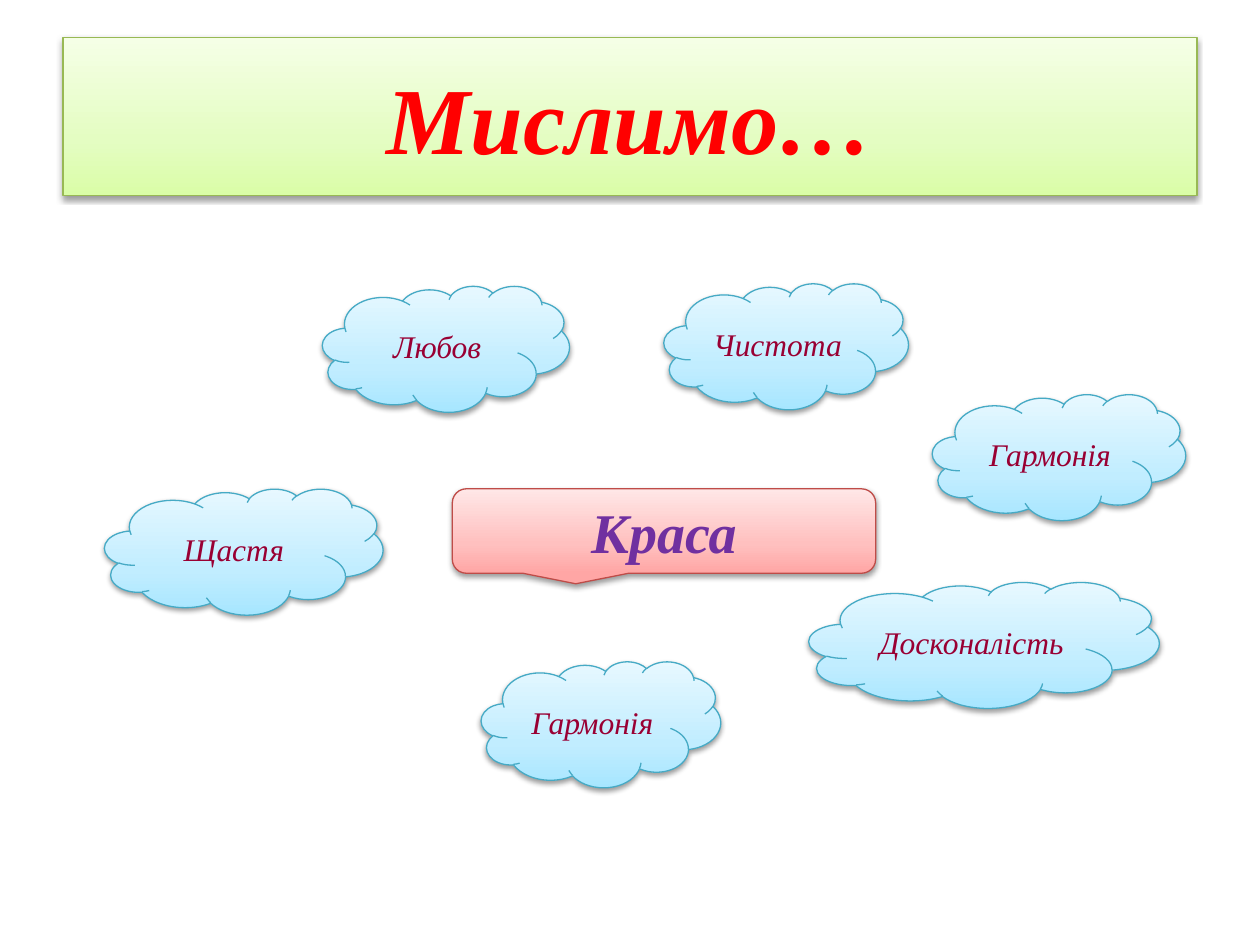
"""Build a slide of clouds with associations around the word for beauty."""
from typing import NamedTuple

from lxml import etree
from pptx import Presentation
from pptx.dml.color import RGBColor
from pptx.enum import shapes, text
from pptx.oxml import ns
from pptx.util import Inches, Pt

RED = RGBColor(0xFF, 0x00, 0x00)
PURPLE = RGBColor(0x70, 0x30, 0xA0)
WINE = RGBColor(0x99, 0x00, 0x33)
GREEN_LINE = RGBColor(0x98, 0xB9, 0x54)
RED_LINE = RGBColor(0xBF, 0x4C, 0x48)
BLUE_LINE = RGBColor(0x46, 0xAA, 0xC5)
GREENS = (RGBColor(0xDA, 0xFD, 0xA7), RGBColor(0xE4, 0xFD, 0xC2), RGBColor(0xF5, 0xFF, 0xE6))
PINKS = (RGBColor(0xFF, 0xA6, 0xA5), RGBColor(0xFF, 0xC0, 0xBF), RGBColor(0xFF, 0xE7, 0xE7))
BLUES = (RGBColor(0xA7, 0xE6, 0xFF), RGBColor(0xC1, 0xED, 0xFF), RGBColor(0xE7, 0xF8, 0xFF))
STOPS = (0, 35, 100)
FONT = "Times New Roman"


class Style(NamedTuple):
    shape: shapes.MSO_SHAPE
    fills: tuple[RGBColor, ...]
    line: RGBColor
    color: RGBColor
    size: int
    bold: bool


class Label(NamedTuple):
    text: str
    left: float
    top: float
    width: float
    height: float = 1


TITLE = Style(shapes.MSO_SHAPE.RECTANGLE, GREENS, GREEN_LINE, RED, 54, True)
CALLOUT = Style(shapes.MSO_SHAPE.ROUNDED_RECTANGULAR_CALLOUT, PINKS, RED_LINE, PURPLE, 32, True)
CLOUD = Style(shapes.MSO_SHAPE.CLOUD, BLUES, BLUE_LINE, WINE, 18, False)

CLOUDS = (
    Label("Любов", 2.56, 2.27, 1.96),
    Label("Чистота", 5.27, 2.25, 1.94),
    Label("Гармонія", 7.4, 3.13, 2.01),
    Label("Гармонія", 3.82, 5.25, 1.9),
    Label("Щастя", 0.83, 3.88, 2.21),
    Label("Досконалість", 6.42, 4.62, 2.78),
)


def add_color(parent, color: RGBColor):
    return etree.SubElement(parent, ns.qn("a:srgbClr"), val=str(color))


def set_gradient(sp, colors: tuple[RGBColor, ...]) -> None:
    sp.fill.gradient()
    sp.fill.gradient_angle = 90
    stops = sp._element.spPr.find(".//" + ns.qn("a:gsLst"))
    for stop in list(stops):
        stops.remove(stop)
    for position, color in zip(STOPS, colors):
        add_color(etree.SubElement(stops, ns.qn("a:gs"), pos=str(position * 1000)), color)


def set_shadow(sp) -> None:
    sp.shadow.inherit = False
    effects = sp._element.spPr.find(ns.qn("a:effectLst"))
    shadow = etree.SubElement(
        effects, ns.qn("a:outerShdw"), blurRad=str(Pt(3.1)), dist=str(Pt(1.6)),
        dir="5400000", rotWithShape="0")
    color = add_color(shadow, RGBColor(0, 0, 0))
    etree.SubElement(color, ns.qn("a:alpha"), val="38000")


def add_label(slide, label: Label, style: Style) -> None:
    sp = slide.shapes.add_shape(
        style.shape, Inches(label.left), Inches(label.top),
        Inches(label.width), Inches(label.height))
    set_gradient(sp, style.fills)
    sp.line.color.rgb = style.line
    sp.line.width = Pt(0.75)
    set_shadow(sp)
    tf = sp.text_frame
    tf.text = label.text
    tf.vertical_anchor = text.MSO_ANCHOR.MIDDLE
    p = tf.paragraphs[0]
    p.alignment = text.PP_ALIGN.CENTER
    font = p.runs[0].font
    font.name = FONT
    font.size = Pt(style.size)
    font.bold = style.bold
    font.italic = True
    font.color.rgb = style.color


def main() -> None:
    prs = Presentation()
    prs.slide_width, prs.slide_height = Inches(10), Inches(7.5)
    s = prs.slides.add_slide(prs.slide_layouts[6])
    add_label(s, Label("Мислимо…", 0.5, 0.3, 9, 1.25), TITLE)
    add_label(s, Label("Краса", 3.59, 3.88, 3.36, 0.67), CALLOUT)
    for cloud in CLOUDS:
        add_label(s, cloud, CLOUD)
    prs.save("out.pptx")


if __name__ == "__main__":
    main()
